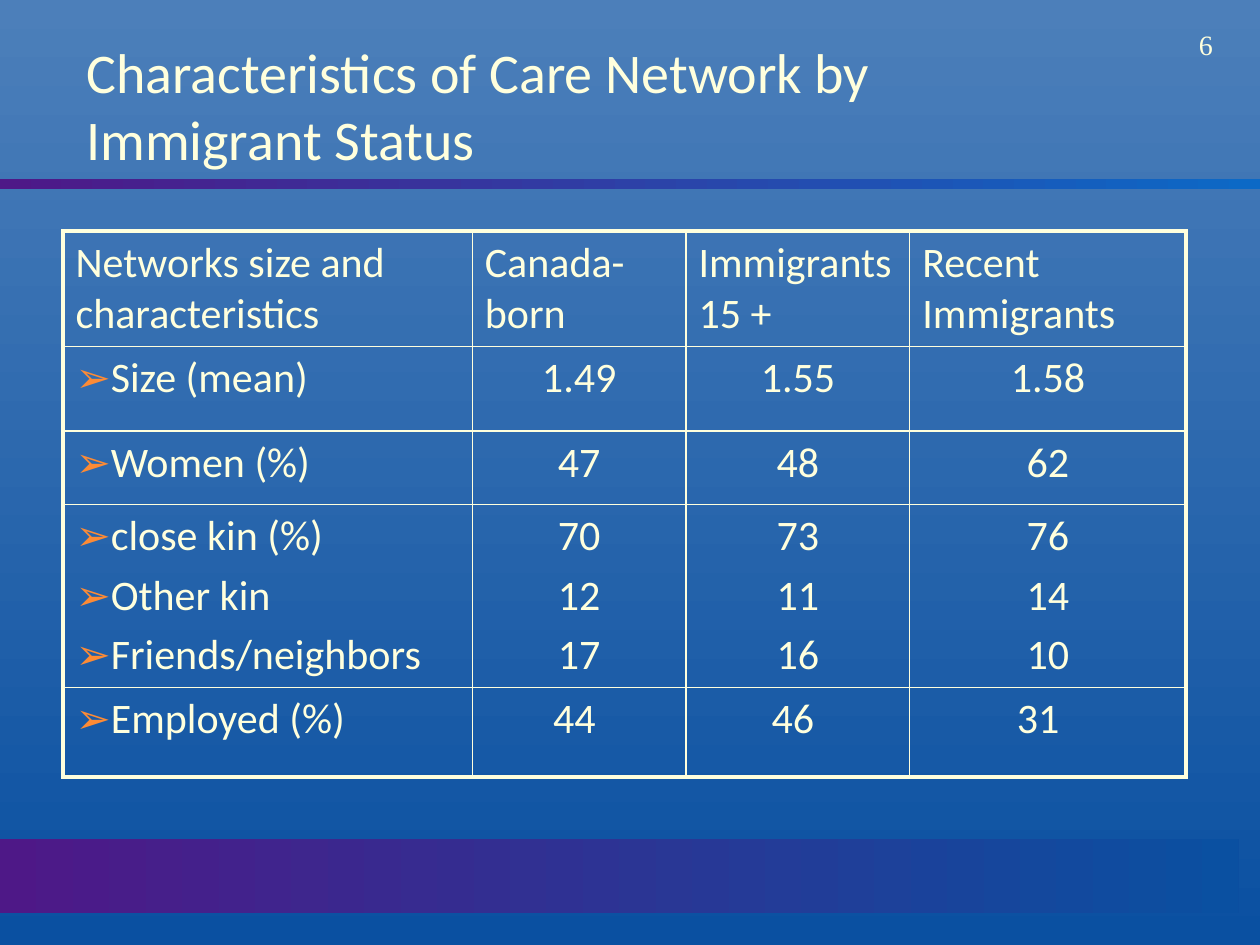
from dataclasses import dataclass

from lxml.etree import SubElement as add_element
from pptx import Presentation as new_deck
from pptx.dml.color import RGBColor
from pptx.enum.shapes import MSO_SHAPE as Preset
from pptx.enum.text import MSO_ANCHOR as Anchor, PP_ALIGN as Align
from pptx.oxml.ns import qn
from pptx.util import Cm, Pt

COLOURS = {
    "sky": "4C7FBA",
    "deep": "0A50A1",
    "purple": "4E1887",
    "bright": "0C69C6",
    "cream": "FFFFDD",
    "orange": "FD8B35",
}
OUTER_LINE, INNER_LINE = Pt(2.25), Pt(1)
CELL_MARGIN = 0.25


@dataclass
class Band:
    top: float
    width: float
    height: float
    end: str


@dataclass
class Row:
    height: float
    labels: tuple
    values: tuple
    header: bool = False
    insets: tuple = (0, 0, 0)


BANDS = [Band(3.6, 25.4, 0.21, "bright"), Band(16.91, 24.97, 1.5, "deep")]
COLUMN_WIDTHS = [8.25, 4.31, 4.51, 5.57]
ROWS = [
    Row(2.33, ("Networks size and characteristics",),
        (("Canada-born",), ("Immigrants 15 +",), ("Recent Immigrants",)), header=True),
    Row(1.7, ("Size (mean)",), (("1.49",), ("1.55",), ("1.58",))),
    Row(1.48, ("Women (%)",), (("47",), ("48",), ("62",))),
    Row(3.69, ("close kin (%)", "Other kin", "Friends/neighbors"),
        (("70", "12", "17"), ("73", "11", "16"), ("76", "14", "10"))),
    Row(1.8, ("Employed (%)",), (("44",), ("46",), ("31",)), insets=(0.2, 0.2, 0.4)),
]


def rgb(name: str) -> RGBColor:
    return RGBColor.from_string(COLOURS[name])


def set_gradient(fill, start: str, end: str, angle: int) -> None:
    fill.gradient()
    fill.gradient_angle = angle
    for stop, name, position in zip(fill.gradient_stops, (start, end), (0, 1)):
        stop.color.rgb = rgb(name)
        stop.position = position


def style_font(para, size: int, face: str = "Calibri") -> None:
    para.font.size = Pt(size)
    para.font.name = face
    para.font.color.rgb = rgb("cream")


def draw_band(page, band: Band) -> None:
    shape = page.shapes.add_shape(
        Preset.RECTANGLE, 0, Cm(band.top), Cm(band.width), Cm(band.height))
    shape.shadow.inherit = False
    shape.line.fill.background()
    set_gradient(shape.fill, "purple", band.end, 0)


def draw_text(page, text: str, area: tuple, size: int, face: str, wrap: bool) -> None:
    frame = page.shapes.add_textbox(*map(Cm, area)).text_frame
    frame.word_wrap = wrap
    frame.vertical_anchor = Anchor.MIDDLE
    para = frame.paragraphs[0]
    para.text = text
    style_font(para, size, face)


def add_bullet(para) -> None:
    properties = para._p.get_or_add_pPr()
    properties.set("marL", "0")
    properties.set("indent", "0")
    colour = add_element(properties, qn("a:buClr"))
    add_element(colour, qn("a:srgbClr"), val=COLOURS["orange"])
    add_element(properties, qn("a:buFont"), typeface="Calibri")
    add_element(properties, qn("a:buChar"), char="➢")


def set_borders(cell, widths: dict) -> None:
    properties = cell._tc.get_or_add_tcPr()
    for side, width in widths.items():
        line = add_element(properties, qn(f"a:ln{side}"), w=str(width))
        fill = add_element(line, qn("a:solidFill"))
        add_element(fill, qn("a:srgbClr"), val=COLOURS["cream"])


def fill_cell(cell, lines: tuple, bullet: bool, centred: bool) -> None:
    frame = cell.text_frame
    for index, text in enumerate(lines):
        para = frame.add_paragraph() if index else frame.paragraphs[0]
        para.text = text
        para.alignment = Align.CENTER if centred else Align.LEFT
        if index:
            para.space_before = Pt(4.8)
        if bullet:
            add_bullet(para)
        style_font(para, 24)


def draw_table(page) -> None:
    last_row, last_column = len(ROWS) - 1, len(COLUMN_WIDTHS) - 1
    table = page.shapes.add_table(
        len(ROWS), len(COLUMN_WIDTHS), Cm(1.27), Cm(4.66),
        Cm(sum(COLUMN_WIDTHS)), Cm(sum(row.height for row in ROWS))).table
    table.first_row = table.horz_banding = False
    for column, width in zip(table.columns, COLUMN_WIDTHS):
        column.width = Cm(width)
    for r, row in enumerate(ROWS):
        table.rows[r].height = Cm(row.height)
        for c, (lines, inset) in enumerate(zip((row.labels, *row.values), (0, *row.insets))):
            cell = table.cell(r, c)
            cell.margin_right = Cm(CELL_MARGIN + inset)
            edges = {"L": c == 0, "R": c == last_column, "T": r == 0, "B": r == last_row}
            set_borders(cell, {side: OUTER_LINE if outer else INNER_LINE
                               for side, outer in edges.items()})
            cell.fill.background()
            fill_cell(cell, lines, bullet=not row.header and c == 0,
                      centred=not row.header and c > 0)


def main() -> None:
    deck = new_deck()
    deck.slide_width, deck.slide_height = Cm(25.4), Cm(19.05)
    page = deck.slides.add_slide(deck.slide_layouts[6])
    set_gradient(page.background.fill, "sky", "deep", 270)
    for band in BANDS:
        draw_band(page, band)
    draw_text(page, "6", (23.92, 0.43, 1.19, 0.94), 16, "Times New Roman", wrap=False)
    draw_text(page, "Characteristics of Care Network by Immigrant Status",
              (1.49, 0.52, 19.89, 3.18), 32, "Calibri", wrap=True)
    draw_table(page)
    deck.save("out.pptx")


if __name__ == "__main__":
    main()
